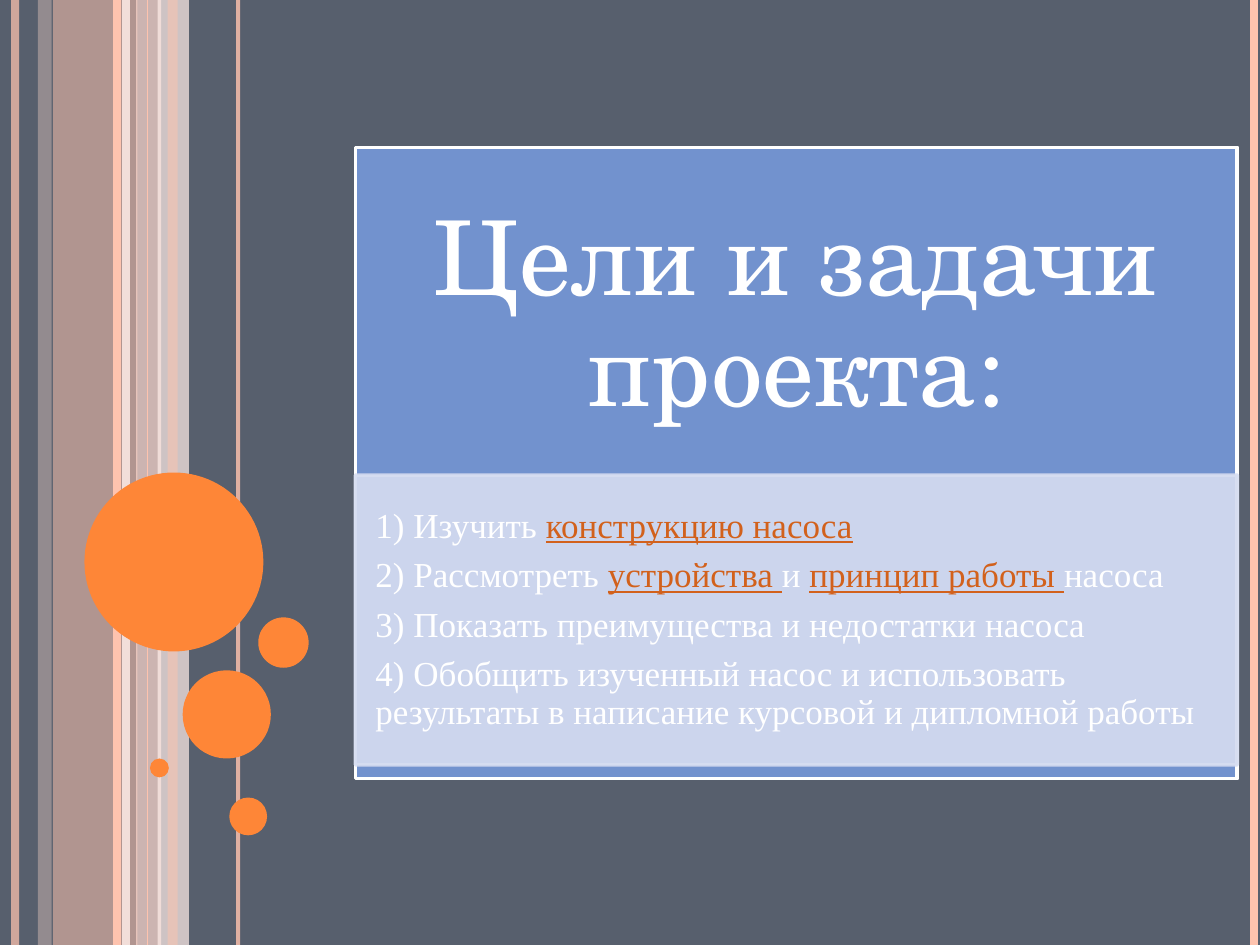
"""Build the slide with the aims and tasks of the project."""
from lxml.etree import SubElement
from pptx import Presentation
from pptx.dml.color import RGBColor
from pptx.enum.shapes import MSO_CONNECTOR as Connector, MSO_SHAPE as Preset
from pptx.enum.text import MSO_ANCHOR as Anchor, MSO_AUTO_SIZE as AutoSize, PP_ALIGN as Align
from pptx.oxml.ns import qn
from pptx.util import Inches, Pt

COLORS = {
    "slate": "575F6D", "peach": "FEC3AE", "blush": "FFD9CE", "cream": "FFEDE8",
    "orange": "FE8637", "blue": "7598D9", "pale": "D6DDF1", "white": "FFFFFF",
    "link": "D2611C",
}
HEIGHT = 7.5
PANEL_LEFT, PANEL_WIDTH = 2.82, 7

BANDS = [(0.42, 0.67, "peach", 54), (0.3, 0.11, "blush", 36),
         (1.08, 0.2, "blush", 70), (1.25, 0.25, "cream", 71)]
STRIPES = [(0.12, "peach", 4.5, 73), (1, "cream", 4.5, 83), (0.93, "peach", 4.5, 100),
           (1.89, "peach", 2.25, 82), (1.17, "peach", 0.75, 100)]
BUBBLES = [(0.67, 3.75, 1.42), (1.45, 5.32, 0.7), (1.19, 6.02, 0.15),
           (1.82, 6.33, 0.3), (2.05, 4.9, 0.4)]
TASKS = [
    [("1) Изучить ", False), ("конструкцию насоса", True)],
    [("2) Рассмотреть ", False), ("устройства ", True), ("и ", False),
     ("принцип работы ", True), ("насоса", False)],
    [("3) Показать преимущества и недостатки насоса", False)],
    [("4) Обобщить изученный насос и использовать результаты "
      "в написание курсовой и дипломной работы", False)],
]


def write(paragraph, text, font="Times New Roman", size=20, color="white", underline=False):
    run = paragraph.add_run()
    run.text = text
    run.font.name, run.font.size = font, Pt(size)
    run.font.underline = underline
    run.font.color.rgb = RGBColor.from_string(COLORS[color])


class SlideBuilder:
    def __init__(self, slide):
        self.slide = slide
        self.shapes = slide.shapes

    def paint(self, fill, owner, color, alpha=100):
        fill.solid()
        fill.fore_color.rgb = RGBColor.from_string(COLORS[color])
        if alpha < 100:
            tint = list(owner.element.spPr.iter(qn("a:srgbClr")))[-1]
            SubElement(tint, qn("a:alpha")).set("val", str(alpha * 1000))

    def background(self, color):
        fill = self.slide.background.fill
        fill.solid()
        fill.fore_color.rgb = RGBColor.from_string(COLORS[color])

    def style(self, shape, color, alpha=100, outline=None, outline_alpha=100):
        self.paint(shape.fill, shape, color, alpha)
        if outline:
            shape.line.width = Pt(2)
            self.paint(shape.line.fill, shape, outline, outline_alpha)
        else:
            shape.line.fill.background()
        shape.shadow.inherit = False

    def shape(self, preset, left, top, width, height, color, **look):
        shape = self.shapes.add_shape(
            preset, Inches(left), Inches(top), Inches(width), Inches(height))
        self.style(shape, color, **look)

    def stripe(self, x, color, weight, alpha):
        stripe = self.shapes.add_connector(
            Connector.STRAIGHT, Inches(x), 0, Inches(x), Inches(HEIGHT))
        stripe.line.width = Pt(weight)
        self.paint(stripe.line.fill, stripe, color, alpha)
        SubElement(stripe.element.spPr, qn("a:effectLst"))

    def placeholder(self, index, top, height, inset_x, inset_y):
        holder = self.slide.placeholders[index]
        holder.left, holder.top = Inches(PANEL_LEFT), Inches(top)
        holder.width, holder.height = Inches(PANEL_WIDTH), Inches(height)
        holder.element.getparent().append(holder.element)
        frame = holder.text_frame
        frame.word_wrap, frame.auto_size = True, AutoSize.NONE
        frame.vertical_anchor = Anchor.MIDDLE
        frame.margin_left = frame.margin_right = Inches(inset_x)
        frame.margin_top = frame.margin_bottom = Inches(inset_y)
        return holder

    def title(self, text, top, height):
        heading = self.placeholder(0, top, height, 0.46, 0.46).text_frame.paragraphs[0]
        heading.alignment, heading.line_spacing = Align.CENTER, 0.9
        write(heading, text, font="TeX Gyre Schola", size=59)

    def tasks(self, tasks, top, height):
        holder = self.placeholder(1, top, height, 0.16, 0.03)
        self.style(holder, "pale", alpha=90, outline="pale", outline_alpha=90)
        frame = holder.text_frame
        for number, parts in enumerate(tasks):
            task = frame.add_paragraph() if number else frame.paragraphs[0]
            layout = task._p.get_or_add_pPr()
            layout.set("marL", "0")
            layout.set("indent", "0")
            SubElement(layout, qn("a:buNone"))
            task.alignment, task.line_spacing = Align.LEFT, 0.9
            task.space_before, task.space_after = Pt(0), Pt(6.6)
            for text, linked in parts:
                write(task, text, color="link" if linked else "white", underline=linked)


def main():
    deck = Presentation()
    deck.slide_width, deck.slide_height = Inches(10), Inches(HEIGHT)
    builder = SlideBuilder(deck.slides.add_slide(deck.slide_layouts[1]))
    builder.background("slate")
    for left, width, color, alpha in BANDS:
        builder.shape(Preset.RECTANGLE, left, 0, width, HEIGHT, color, alpha=alpha)
    for stripe in STRIPES:
        builder.stripe(*stripe)
    builder.shape(Preset.RECTANGLE, 1.33, 0, 0.08, HEIGHT, "peach", alpha=51)
    for left, top, diameter in BUBBLES:
        builder.shape(Preset.OVAL, left, top, diameter, diameter, "orange")
    builder.stripe(9.95, "peach", 4.5, 100)
    builder.shape(Preset.RECTANGLE, PANEL_LEFT, 1.17, PANEL_WIDTH, 5.01, "blue",
                  alpha=90, outline="white")
    builder.title("Цели и задачи проекта:", 1.17, 2.7)
    builder.tasks(TASKS, 3.77, 2.3)
    deck.save("out.pptx")


if __name__ == "__main__":
    main()
